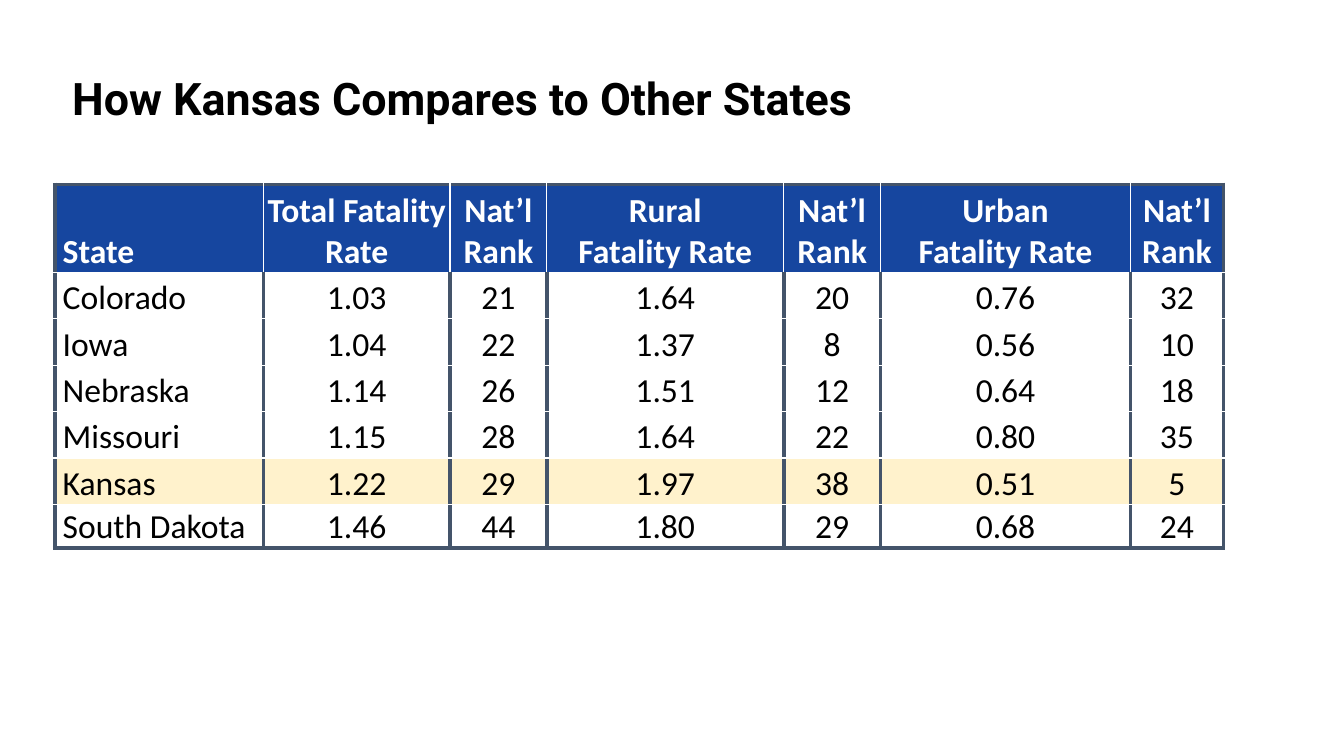
from dataclasses import dataclass

import lxml.etree
import pptx
import pptx.dml.color
import pptx.enum.text
import pptx.oxml.ns
import pptx.table
import pptx.util
from pptx.util import Cm, Pt

RGBColor = pptx.dml.color.RGBColor
Align = pptx.enum.text.PP_ALIGN
Anchor = pptx.enum.text.MSO_ANCHOR

BLACK = RGBColor(0x00, 0x00, 0x00)
WHITE = RGBColor(0xFF, 0xFF, 0xFF)
HEADER_BLUE = RGBColor(0x16, 0x46, 0x9F)
KANSAS_CREAM = RGBColor(0xFF, 0xF2, 0xCC)
SLATE = RGBColor(0x44, 0x54, 0x6A)


@dataclass(frozen=True)
class Border:
    color: RGBColor
    width: pptx.util.Length


@dataclass(frozen=True)
class Column:
    heading: str
    width: pptx.util.Length


@dataclass(frozen=True)
class RowStyle:
    fill: RGBColor
    color: RGBColor
    bold: bool
    divider: Border


THICK = Border(SLATE, Pt(3))
THIN = Border(WHITE, Pt(1))

HEADER = RowStyle(HEADER_BLUE, WHITE, True, THIN)
BODY = RowStyle(WHITE, BLACK, False, THICK)
HIGHLIGHT = RowStyle(KANSAS_CREAM, BLACK, False, THICK)

COLUMNS = [
    Column("State", Cm(5.26)),
    Column("Total Fatality Rate", Cm(4.7)),
    Column("Nat’l Rank", Cm(2.44)),
    Column("Rural\vFatality Rate", Cm(5.97)),
    Column("Nat’l Rank", Cm(2.44)),
    Column("Urban\vFatality Rate", Cm(6.3)),
    Column("Nat’l Rank", Cm(2.34)),
]
STATES = [
    ["Colorado", "1.03", "21", "1.64", "20", "0.76", "32"],
    ["Iowa", "1.04", "22", "1.37", "8", "0.56", "10"],
    ["Nebraska", "1.14", "26", "1.51", "12", "0.64", "18"],
    ["Missouri", "1.15", "28", "1.64", "22", "0.80", "35"],
    ["Kansas", "1.22", "29", "1.97", "38", "0.51", "5"],
    ["South Dakota", "1.46", "44", "1.80", "29", "0.68", "24"],
]
ROW_HEIGHTS = [Cm(2.21)] + [Cm(1.17)] * 5 + [Cm(1.09)]


def format_runs(paragraph, font_name: str, size: int, color: RGBColor, bold: bool) -> None:
    for run in paragraph.runs:
        run.font.name = font_name
        run.font.size = Pt(size)
        run.font.color.rgb = color
        run.font.bold = bold


def add_title(slide, text: str) -> None:
    shape = slide.shapes.add_textbox(Cm(1.57), Cm(0), Cm(29.21), Cm(3.28))
    text_frame = shape.text_frame
    text_frame.word_wrap = True
    text_frame.vertical_anchor = Anchor.BOTTOM
    text_frame.text = text
    paragraph = text_frame.paragraphs[0]
    paragraph.line_spacing = 0.9
    format_runs(paragraph, "Roboto", 32, BLACK, True)


def set_borders(cell: pptx.table._Cell, borders: dict[str, Border]) -> None:
    """Add the cell's lines; must run before the fill is set."""
    qualified = pptx.oxml.ns.qn
    properties = cell._tc.get_or_add_tcPr()
    for side in "LRTB":
        border = borders[side]
        line = lxml.etree.SubElement(
            properties, qualified(f"a:ln{side}"), w=str(int(border.width)))
        fill = lxml.etree.SubElement(line, qualified("a:solidFill"))
        lxml.etree.SubElement(fill, qualified("a:srgbClr"), val=str(border.color))


def fill_cell(cell: pptx.table._Cell, text: str, style: RowStyle, first_column: bool) -> None:
    cell.margin_left = Cm(0.2 if first_column else 0.02)
    cell.margin_right = cell.margin_top = Cm(0.02)
    cell.margin_bottom = Cm(0)
    cell.vertical_anchor = Anchor.BOTTOM
    cell.fill.solid()
    cell.fill.fore_color.rgb = style.fill
    cell.text_frame.text = text
    paragraph = cell.text_frame.paragraphs[0]
    paragraph.alignment = Align.LEFT if first_column else Align.CENTER
    format_runs(paragraph, "Calibri", 24, style.color, style.bold)


def style_for(row: list[str], row_index: int) -> RowStyle:
    if row_index == 0:
        return HEADER
    return HIGHLIGHT if row[0] == "Kansas" else BODY


def add_fatality_table(slide) -> None:
    rows = [[column.heading for column in COLUMNS]] + STATES
    width = sum(column.width for column in COLUMNS)
    frame = slide.shapes.add_table(
        len(rows), len(COLUMNS), Cm(1.38), Cm(4.65), width, sum(ROW_HEIGHTS))
    table = frame.table
    table.first_row = False
    table.horz_banding = False
    for table_column, column in zip(table.columns, COLUMNS):
        table_column.width = column.width
    last_row, last_column = len(rows) - 1, len(COLUMNS) - 1
    for row_index, row in enumerate(rows):
        table.rows[row_index].height = ROW_HEIGHTS[row_index]
        style = style_for(row, row_index)
        for column_index, text in enumerate(row):
            cell = table.cell(row_index, column_index)
            set_borders(cell, {
                "L": THICK if column_index == 0 else style.divider,
                "R": THICK if column_index == last_column else style.divider,
                "T": THICK if row_index == 0 else THIN,
                "B": THICK if row_index == last_row else THIN,
            })
            fill_cell(cell, text, style, column_index == 0)


def main() -> None:
    presentation = pptx.Presentation()
    presentation.slide_width = Cm(33.87)
    presentation.slide_height = Cm(19.05)
    slide = presentation.slides.add_slide(presentation.slide_layouts[6])
    add_title(slide, "How Kansas Compares to Other States")
    add_fatality_table(slide)
    presentation.save("out.pptx")


if __name__ == "__main__":
    main()
